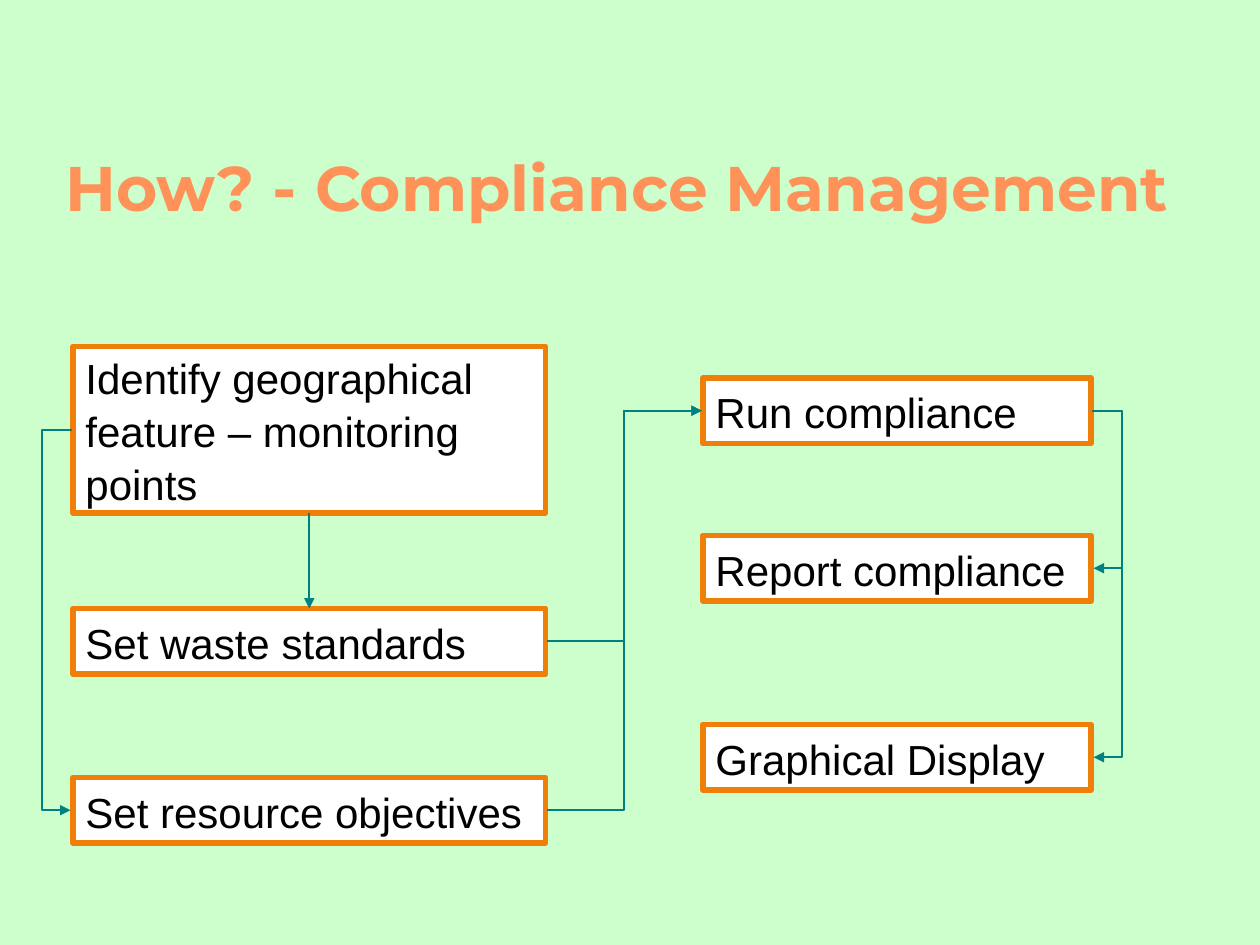
from lxml import etree
from pptx import Presentation
from pptx.dml.color import RGBColor
from pptx.enum.shapes import MSO_CONNECTOR as CONN, MSO_SHAPE as SHAPE
from pptx.enum.text import MSO_ANCHOR as ANCHOR, PP_ALIGN as ALIGN
from pptx.oxml.ns import qn
from pptx.util import Inches, Pt

TITLE = "How? - Compliance Management"
LEFT_COL, RIGHT_COL = (0.58, 3.75), (5.58, 3.08)  # left, width
BOXES = {  # name: (text, column, top, height)
    "standards": ("Set waste standards", LEFT_COL, 4.83, 0.52),
    "objectives": ("Set resource objectives", LEFT_COL, 6.17, 0.52),
    "run": ("Run compliance", RIGHT_COL, 3, 0.52),
    "report": ("Report compliance", RIGHT_COL, 4.25, 0.52),
    "display": ("Graphical Display", RIGHT_COL, 5.75, 0.52),
    "identify": ("Identify geographical feature – monitoring points",
                 LEFT_COL, 2.75, 1.32),
}
ACROSS = [("standards", "run"), ("objectives", "run")]
AROUND = [("run", "report", 1), ("run", "display", 1),
          ("identify", "objectives", -1)]  # 1 loops on the right, -1 on the left
GAP, LOOP, STEP = 0.01, 0.24, 0.01


def color(value):
    return RGBColor.from_string(value)


def add_run(p, text, font, size, hex_color, bold=False):
    r = p.add_run()
    r.text = text
    r.font.name, r.font.size, r.font.bold = font, Pt(size), bold
    r.font.color.rgb = color(hex_color)


def add_box(s, text, column, top, height):
    left, width = column
    box = s.shapes.add_shape(SHAPE.RECTANGLE, Inches(left), Inches(top),
                             Inches(width), Inches(height))
    box.shadow.inherit = False
    box.fill.solid()
    box.fill.fore_color.rgb = color("FFFFFF")
    box.line.color.rgb = color("F07F09")
    box.line.width = Pt(3.35)
    tf = box.text_frame
    tf.word_wrap = True
    tf.vertical_anchor = ANCHOR.MIDDLE
    p = tf.paragraphs[0]
    p.alignment = ALIGN.LEFT
    p.line_spacing = 1.05
    add_run(p, text, "Arial", 24, "000000")
    return box


def add_arrow(s, kind, x1, y1, x2, y2, bend=None):
    """Add an arrow; bend places an elbow as a multiple of the width."""
    cxn = s.shapes.add_connector(kind, *map(Inches, (x1, y1, x2, y2)))
    cxn.line.color.rgb = color("008080")
    cxn.line.width = Pt(1)
    sp_pr = cxn._element.spPr
    etree.SubElement(sp_pr, qn("a:effectLst"))
    etree.SubElement(cxn.line._get_or_add_ln(), qn("a:tailEnd"), type="triangle")
    if bend is not None:
        guides = sp_pr.find(qn("a:prstGeom")).find(qn("a:avLst"))
        etree.SubElement(guides, qn("a:gd"), name="adj1",
                         fmla=f"val {round(bend * 100000)}")
    return cxn


def side(name, direction):
    """Return the point just outside the middle of a box's left or right side."""
    _, (left, width), top, height = BOXES[name]
    x = left + width + GAP if direction > 0 else left - GAP
    return x, top + height / 2


prs = Presentation()
prs.slide_width, prs.slide_height = Inches(10), Inches(7.5)
s = prs.slides.add_slide(prs.slide_layouts[5])
s.background.fill.solid()
s.background.fill.fore_color.rgb = color("CCFFCC")

title = s.shapes.title
title.left, title.top = Inches(0.42), Inches(0.58)
title.width, title.height = Inches(9.17), Inches(1.25)
title.text_frame.vertical_anchor = ANCHOR.BOTTOM
p = title.text_frame.paragraphs[0]
p.alignment = ALIGN.LEFT
add_run(p, TITLE, "Montserrat", 36, "FF9258", bold=True)

shapes = {name: add_box(s, *box) for name, box in BOXES.items()}

down = add_arrow(s, CONN.STRAIGHT, 2.46, 4.07, 2.46, 4.83)
down.begin_connect(shapes["identify"], 2)
down.end_connect(shapes["standards"], 0)

for start, end in ACROSS:
    add_arrow(s, CONN.ELBOW, *side(start, 1), *side(end, -1))

for start, end, direction in AROUND:
    x1, y1 = side(start, direction)
    x2, y2 = side(end, direction)
    add_arrow(s, CONN.ELBOW, x1, y1, x2 + direction * STEP, y2, LOOP / STEP)

prs.save("out.pptx")
